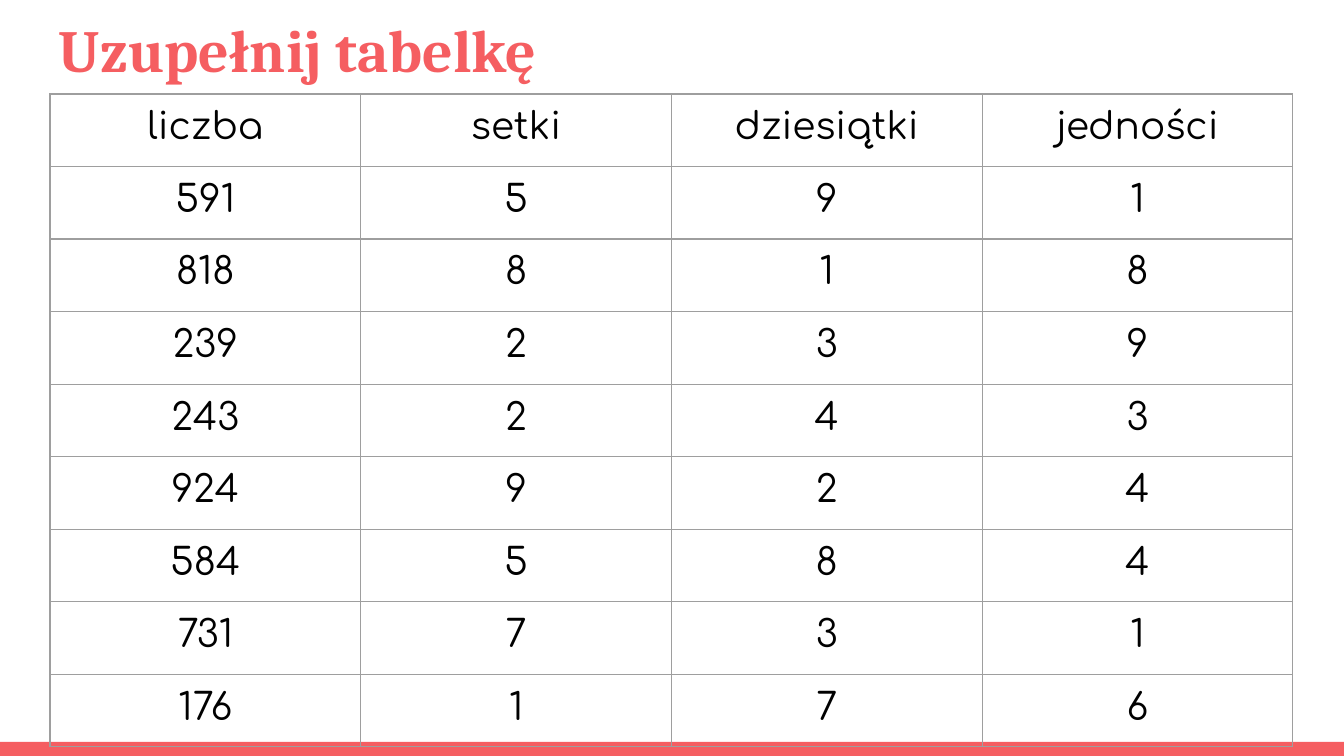
import pptx
import pptx.util
import pptx.dml.color
import pptx.enum.text
import pptx.enum.shapes
import pptx.oxml
import pptx.oxml.ns

SCALE = 914400 / 134.4
CORAL, BLACK, GREY = "F55E61", "000000", "9E9E9E"
HEADS = ["liczba", "setki", "dziesiątki", "jedności"]
NUMS = ["591", "818", "239", "243", "924", "584", "731", "176"]
INSET = 13
ALIGN = pptx.enum.text.PP_ALIGN
ANCHOR = pptx.enum.text.MSO_ANCHOR


def px(n):
    return pptx.util.Emu(round(n * SCALE))


def tint(code):
    return pptx.dml.color.RGBColor.from_string(code)


def apply(item, form):
    for name, value in form.items():
        setattr(item, name, value)


def margins():
    return {f"margin_{side}": px(INSET) for side in ("left", "top", "right", "bottom")}


def place(shape, box):
    apply(shape, dict(zip(("left", "top", "width", "height"), map(px, box))))


def write(frame, text, color, align, form):
    frame.text = text
    para = frame.paragraphs[0]
    para.alignment = align
    font = para.runs[0].font
    apply(font, form)
    font.color.rgb = tint(color)


def add_title(slide, box):
    title = slide.shapes.title
    place(title, box)
    frame = title.text_frame
    apply(frame, {
        **margins(),
        "word_wrap": True,
        "auto_size": pptx.enum.text.MSO_AUTO_SIZE.NONE,
        "vertical_anchor": ANCHOR.TOP,
    })
    form = {"name": "Cambria", "size": pptx.util.Pt(32), "bold": True}
    write(frame, "Uzupełnij tabelkę", CORAL, ALIGN.LEFT, form)


def add_bar(slide, box):
    kind = pptx.enum.shapes.MSO_SHAPE.RECTANGLE
    bar = slide.shapes.add_shape(kind, *map(px, box))
    bar.shadow.inherit = False
    bar.fill.solid()
    bar.fill.fore_color.rgb = tint(CORAL)
    bar.line.fill.background()


def add_edges(cell):
    props = cell._tc.get_or_add_tcPr()
    for spot, side in enumerate(("lnL", "lnR", "lnT", "lnB")):
        edge = pptx.oxml.parse_xml(
            f'<a:{side} {pptx.oxml.ns.nsdecls("a")} w="{pptx.util.Pt(0.75)}">'
            f'<a:solidFill><a:srgbClr val="{GREY}"/></a:solidFill></a:{side}>'
        )
        props.insert(spot, edge)


def add_grid(slide, box):
    rows = [HEADS] + [[num, *num] for num in NUMS]
    wide, high = box[2] / len(HEADS), box[3] / len(rows)
    grid = slide.shapes.add_table(len(rows), len(HEADS), *map(px, box)).table
    apply(grid, {"first_row": False, "horz_banding": False})
    for col in grid.columns:
        col.width = px(wide)
    form = {"name": "Comfortaa", "size": pptx.util.Pt(20)}
    for row, words in zip(grid.rows, rows):
        row.height = px(high)
        for cell, word in zip(row.cells, words):
            apply(cell, {**margins(), "vertical_anchor": ANCHOR.TOP})
            write(cell.text_frame, word, BLACK, ALIGN.CENTER, form)
            cell.fill.background()
            add_edges(cell)


def main():
    deck = pptx.Presentation()
    apply(deck, {"slide_width": px(1344), "slide_height": px(756)})
    slide = deck.slides.add_slide(deck.slide_layouts[5])
    add_bar(slide, (0, 742, 1344, 14))
    add_title(slide, (46, 0, 1253, 94))
    add_grid(slide, (50, 94, 1243, 653))
    deck.save("out.pptx")


if __name__ == "__main__":
    main()
